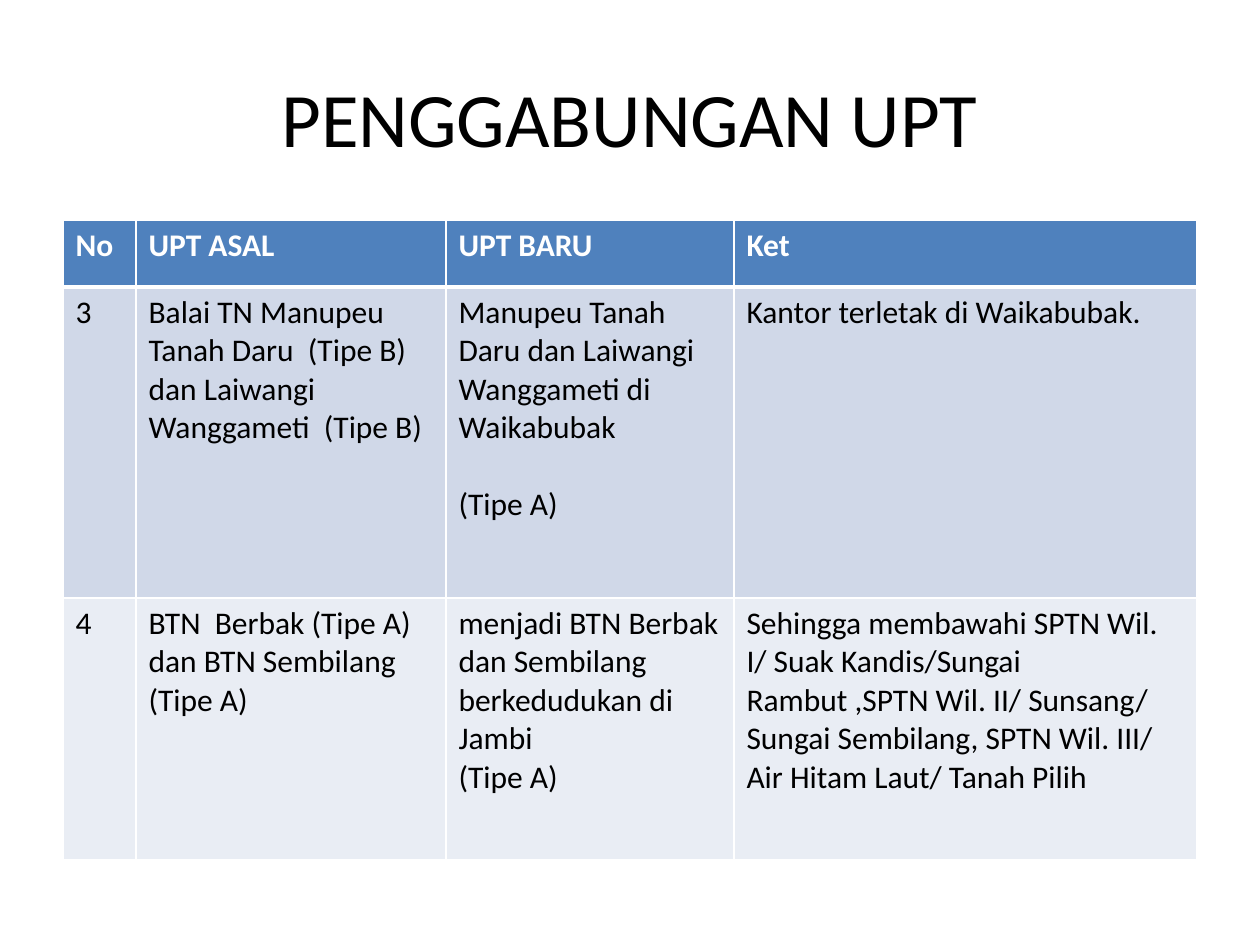
from lxml import etree
from pptx import Presentation
from pptx.dml.color import RGBColor
from pptx.enum.text import MSO_ANCHOR, PP_ALIGN
from pptx.oxml.ns import qn
from pptx.util import Pt

MIDDLE = MSO_ANCHOR.MIDDLE
CENTER = PP_ALIGN.CENTER
BLACK = RGBColor(0x00, 0x00, 0x00)
WHITE = RGBColor(0xFF, 0xFF, 0xFF)
BLUE = RGBColor(0x4F, 0x81, 0xBD)
BAND_DARK = RGBColor(0xD0, 0xD8, 0xE8)
BAND_LIGHT = RGBColor(0xE9, 0xED, 0xF4)
FONT = "Calibri"
LINE_GAP = Pt(22)


def px(n):
    return round(n * 914400 / 126)


def add_run(p, text, size, color, bold=False):
    r = p.add_run()
    r.text = text
    r.font.name = FONT
    r.font.size = Pt(size)
    r.font.color.rgb = color
    r.font.bold = bold


prs = Presentation()
prs.slide_width = px(1260)
prs.slide_height = px(945)
s = prs.slides.add_slide(prs.slide_layouts[6])

# Title
title = s.shapes.add_textbox(px(63), px(38), px(1134), px(157))
tf = title.text_frame
tf.word_wrap = True
tf.vertical_anchor = MIDDLE
p = tf.paragraphs[0]
p.alignment = CENTER
add_run(p, "PENGGABUNGAN UPT", 44, BLACK)

# Table: each cell is a list of paragraphs
col_widths = [73, 310, 288, 463]
row_heights = [67, 311, 262]
row_fills = [BLUE, BAND_DARK, BAND_LIGHT]
rows = [
    [["No"], ["UPT ASAL"], ["UPT BARU"], ["Ket"]],
    [
        ["3"],
        ["Balai TN Manupeu Tanah Daru  (Tipe B) dan Laiwangi Wanggameti  (Tipe B)"],
        ["Manupeu Tanah Daru dan Laiwangi Wanggameti di Waikabubak", "(Tipe A)"],
        ["Kantor terletak di Waikabubak."],
    ],
    [
        ["4"],
        ["BTN  Berbak (Tipe A) dan BTN Sembilang (Tipe A)"],
        ["menjadi BTN Berbak dan Sembilang berkedudukan di Jambi", "(Tipe A)"],
        ["Sehingga membawahi SPTN Wil. I/ Suak Kandis/Sungai Rambut ,SPTN Wil. II/ "
         "Sunsang/ Sungai Sembilang, SPTN Wil. III/ Air Hitam Laut/ Tanah Pilih"],
    ],
]

frame = s.shapes.add_table(len(rows), len(col_widths), px(63), px(220),
                           px(sum(col_widths)), px(sum(row_heights)))
table = frame.table
for col, width in zip(table.columns, col_widths):
    col.width = px(width)
for row, height in zip(table.rows, row_heights):
    row.height = px(height)

for i, cells in enumerate(rows):
    header = i == 0
    for j, paragraphs in enumerate(cells):
        cell = table.cell(i, j)
        tf = cell.text_frame
        for k, text in enumerate(paragraphs):
            p = tf.add_paragraph() if k else tf.paragraphs[0]
            add_run(p, text, 18, WHITE if header else BLACK, header)

        # Borders come before the fill in the cell properties
        tc_pr = cell._tc.get_or_add_tcPr()
        for side in ("L", "R", "T", "B"):
            thick = (header and side == "B") or (i == 1 and side == "T")
            ln = etree.SubElement(tc_pr, qn(f"a:ln{side}"), w=str(Pt(3 if thick else 1)))
            fill = etree.SubElement(ln, qn("a:solidFill"))
            etree.SubElement(fill, qn("a:srgbClr"), val=str(WHITE))
        cell.fill.solid()
        cell.fill.fore_color.rgb = row_fills[i]

# The type in row 3 stands one line below the name
table.cell(1, 2).text_frame.paragraphs[1].space_before = LINE_GAP

prs.save("out.pptx")
